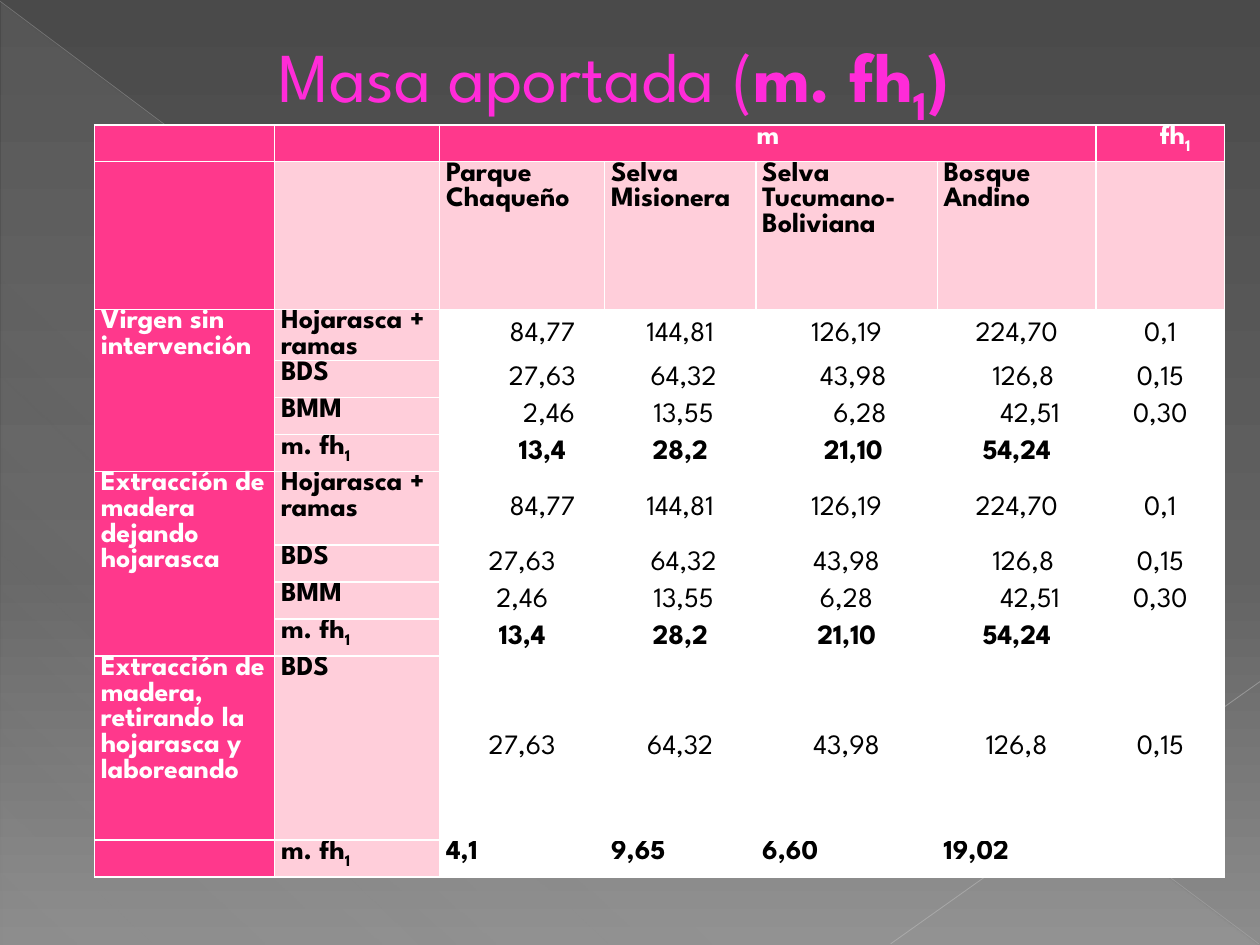
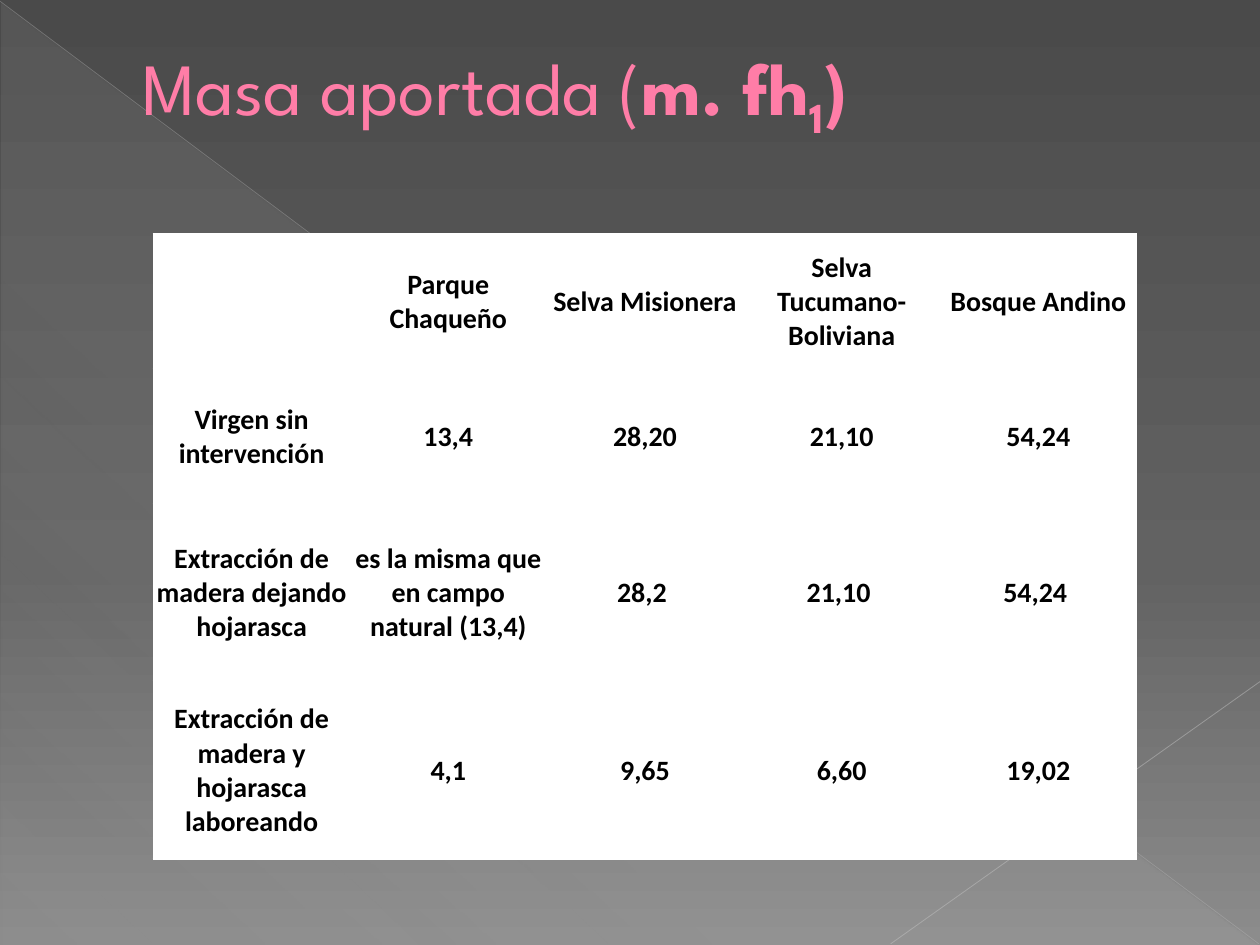
from lxml.etree import SubElement
from pptx import Presentation
from pptx.dml.color import RGBColor
from pptx.enum.shapes import MSO_CONNECTOR, MSO_SHAPE
from pptx.enum.text import MSO_ANCHOR as Anchor, MSO_AUTO_SIZE, PP_ALIGN as Align
from pptx.oxml.ns import qn
from pptx.util import Pt

WHITE = RGBColor(0xFF, 0xFF, 0xFF)
BLACK = RGBColor(0, 0, 0)
PINK = RGBColor(0xFF, 0x38, 0x8C)
PALE_PINK = RGBColor(0xFF, 0xCE, 0xDA)
MAGENTA = RGBColor(0xFF, 0x2B, 0xD8)
ROSE = RGBColor(0xFF, 0x7D, 0xA7)
SHEEN = RGBColor(0xD2, 0xD2, 0xD2)
DIAGONAL_GREY = RGBColor(0xBF, 0xBF, 0xBF)
CORNER_GREY = RGBColor(0xC6, 0xC6, 0xC6)
BACKDROP = [(0, RGBColor(0x4A, 0x4A, 0x4A), 100),
            (60, RGBColor(0x62, 0x62, 0x62), 100),
            (100, RGBColor(0x8C, 0x8C, 0x8C), 100)]
SHEEN_STOPS = [(0, SHEEN, 10), (70, SHEEN, 8), (100, SHEEN, 1)]
DISPLAY, BODY = "League Spartan", "Calibri"
SPACE = 3.85  # width of one digit-alignment step in the first table


def set_gradient(element, stops, angle):
    """Give the gradient inside element its (position, colour, opacity) stops."""
    gradient = element.find(".//" + qn("a:gradFill"))
    stop_list = gradient.find(qn("a:gsLst"))
    for old_stop in list(stop_list):
        stop_list.remove(old_stop)
    for position, color, opacity in stops:
        stop = SubElement(stop_list, qn("a:gs"), pos=str(position * 1000))
        rgb = SubElement(stop, qn("a:srgbClr"), val=str(color))
        SubElement(rgb, qn("a:alpha"), val=str(opacity * 1000))
    gradient.find(qn("a:lin")).set("ang", str(angle * 60000))


def add_runs(paragraph, runs, size, font, color):
    """Add (text, bold, subscript) runs."""
    for text, bold, subscript in runs:
        run = paragraph.add_run()
        run.text = text
        run.font.size = Pt(size)
        run.font.name = font
        run.font.bold = bold
        run.font.color.rgb = color
        if subscript:
            run.font._element.set("baseline", "-25000")
    if not runs:
        paragraph._p.get_or_add_endParaRPr().set("sz", str(size * 100))


prs = Presentation()
prs.slide_width, prs.slide_height = Pt(720), Pt(540)

# Shared backdrop and title
title_runs = [("Masa aportada (", False, False), ("m. fh", True, False),
              ("1", True, True), (")", True, False)]
titles = [  # box, left and top inset, size, colour
    ((152, 15, 451, 104), 7.2, 3.6, 40, MAGENTA),
    ((36, 21, 648, 110), 45.4, 3, 42, ROSE),
]
backdrop_lines = [
    ((0, 0.7, 719.3, 539.3), DIAGONAL_GREY, 0.39, 35),
    ((720, 389.5, 509, 539.3), CORNER_GREY, 0.47, 45),
]
slides = []
for box, inset_left, inset_top, size, color in titles:
    slide = prs.slides.add_slide(prs.slide_layouts[5])
    slides.append(slide)
    slide.background.fill.gradient()
    set_gradient(slide._element.cSld, BACKDROP, 90)

    sheen = slide.shapes.add_shape(MSO_SHAPE.RIGHT_TRIANGLE,
                                   Pt(0.7), Pt(1.4), Pt(718.6), Pt(538.6))
    sheen.shadow.inherit = False
    sheen.line.fill.background()
    sheen.fill.gradient()
    set_gradient(sheen._element.spPr, SHEEN_STOPS, 133)

    for ends, grey, width, opacity in backdrop_lines:
        ray = slide.shapes.add_connector(MSO_CONNECTOR.STRAIGHT, *map(Pt, ends))
        ray.line.width = Pt(width)
        ray.line.color.rgb = grey
        properties = ray._element.spPr
        rgb = properties.find(".//" + qn("a:srgbClr"))
        SubElement(rgb, qn("a:alpha"), val=str(opacity * 1000))
        SubElement(properties, qn("a:effectLst"))

    title = slide.shapes.title
    title.left, title.top, title.width, title.height = map(Pt, box)
    slide.shapes._spTree.append(title._element)
    frame = title.text_frame
    frame.word_wrap = True
    frame.auto_size = MSO_AUTO_SIZE.NONE
    frame.vertical_anchor = Anchor.TOP
    frame.margin_left, frame.margin_top = Pt(inset_left), Pt(inset_top)
    frame.paragraphs[0].alignment = Align.LEFT
    add_runs(frame.paragraphs[0], title_runs, size, DISPLAY, color)

# Slide 1: litter mass by treatment, component and forest
forests = ["Parque Chaqueño", "Selva Misionera",
           "Selva Tucumano-Boliviana", "Bosque Andino"]
treatments = {2: "Virgen sin intervención",
              6: "Extracción de madera dejando hojarasca",
              10: "Extracción de madera, retirando la hojarasca y laboreando"}
product = "m. fh"
components = [  # label, values, digit-alignment steps
    ("Hojarasca + ramas", "84,77 144,81 126,19 224,70 0,1", (6, 0, 0, 0, 0)),
    ("BDS", "27,63 64,32 43,98 126,8 0,15", (6, 1, 2, 2, 0)),
    ("BMM", "2,46 13,55 6,28 42,51 0,30", (8, 1, 4, 4, 0)),
    (product, "13,4 28,2 21,10 54,24", (6, 0, 2, 0)),
    ("Hojarasca + ramas", "84,77 144,81 126,19 224,70 0,1", (6, 0, 0, 0, 0)),
    ("BDS", "27,63 64,32 43,98 126,8 0,15", (0, 1, 0, 2, 0)),
    ("BMM", "2,46 13,55 6,28 42,51 0,30", (0, 1, 0, 4, 0)),
    (product, "13,4 28,2 21,10 54,24", (0, 0, 0, 0)),
    ("BDS", "27,63 64,32 43,98 126,8 0,15", (0, 0, 0, 0, 0)),
    (product, "4,1 9,65 6,60 19,02", (0, 0, 0, 0)),
]
column_widths = [103, 94.3, 94.3, 86.4, 103.7, 90.7, 73.4]
row_heights = [21.1, 84.4, 29.2, 21.1, 21.1, 21.1, 42.2, 21.1, 21.1, 21.1, 105.2, 21.1]
last_row = len(row_heights) - 1

texts = {(0, 2): "m", (0, 6): "fh"}
steps = {}
for column, forest in enumerate(forests, 2):
    texts[1, column] = forest
for row, treatment in treatments.items():
    texts[row, 0] = treatment
for row, (label, values, value_steps) in enumerate(components, 2):
    texts[row, 1] = label
    for column, (value, step) in enumerate(zip(values.split(), value_steps), 2):
        texts[row, column] = value
        steps[row, column] = step

mass_table = slides[0].shapes.add_table(
    len(row_heights), len(column_widths), Pt(54), Pt(71.3),
    Pt(sum(column_widths)), Pt(sum(row_heights))).table
mass_table.horz_banding = False
for column, width in enumerate(column_widths):
    mass_table.columns[column].width = Pt(width)
for row, height in enumerate(row_heights):
    mass_table.rows[row].height = Pt(height)
    for column in range(len(column_widths)):
        cell = mass_table.cell(row, column)
        is_value = row > 1 and column > 1
        is_strong = row == 0 or column == 0
        text = texts.get((row, column))
        is_product = texts.get((row, 1)) == product
        cell.margin_left = Pt(3.6 + SPACE * steps.get((row, column), 0))
        cell.margin_right = Pt(3.6)
        cell.margin_top = cell.margin_bottom = 0
        cell.fill.solid()
        cell.fill.fore_color.rgb = PINK if is_strong else WHITE if is_value else PALE_PINK
        paragraph = cell.text_frame.paragraphs[0]
        if (is_value and row < last_row) or text == "m":
            paragraph.alignment = Align.CENTER
        if is_value and row < last_row:
            cell.vertical_anchor = Anchor.MIDDLE
        runs = [(text, not is_value or is_product, False)] if text else []
        if text in ("fh", product):
            runs.append(("1", True, True))
        add_runs(paragraph, runs, 16, DISPLAY, WHITE if is_strong else BLACK)
mass_table.cell(0, 6).margin_left = Pt(36.5)
mass_table.cell(0, 2).merge(mass_table.cell(0, 5))
for first_row in (2, 6):
    mass_table.cell(first_row, 0).merge(mass_table.cell(first_row + 3, 0))

# Slide 2: summary of m. fh1
summary = [
    ["", *forests],
    ["Virgen sin intervención", "13,4", "28,20", "21,10", "54,24"],
    ["Extracción de madera dejando hojarasca",
     "es la misma que en campo natural (13,4)", "28,2", "21,10", "54,24"],
    ["Extracción de madera y hojarasca laboreando", "4,1", "9,65", "6,60", "19,02"],
]
summary_heights = [77, 77, 101.5, 101.5]
summary_table = slides[1].shapes.add_table(
    4, 5, Pt(87.6), Pt(133.8), Pt(562), Pt(sum(summary_heights))).table
summary_table.horz_banding = False
for row, height in enumerate(summary_heights):
    summary_table.rows[row].height = Pt(height)
    for column, text in enumerate(summary[row]):
        cell = summary_table.cell(row, column)
        cell.margin_left = cell.margin_right = cell.margin_top = Pt(0.7)
        cell.margin_bottom = 0
        if row == 2 and column > 1:
            cell.margin_right = Pt(4.3)
        cell.vertical_anchor = Anchor.MIDDLE
        cell.fill.solid()
        cell.fill.fore_color.rgb = WHITE
        paragraph = cell.text_frame.paragraphs[0]
        paragraph.alignment = Align.CENTER
        add_runs(paragraph, [(text, True, False)] if text else [], 16, BODY, BLACK)

prs.save("out.pptx")
